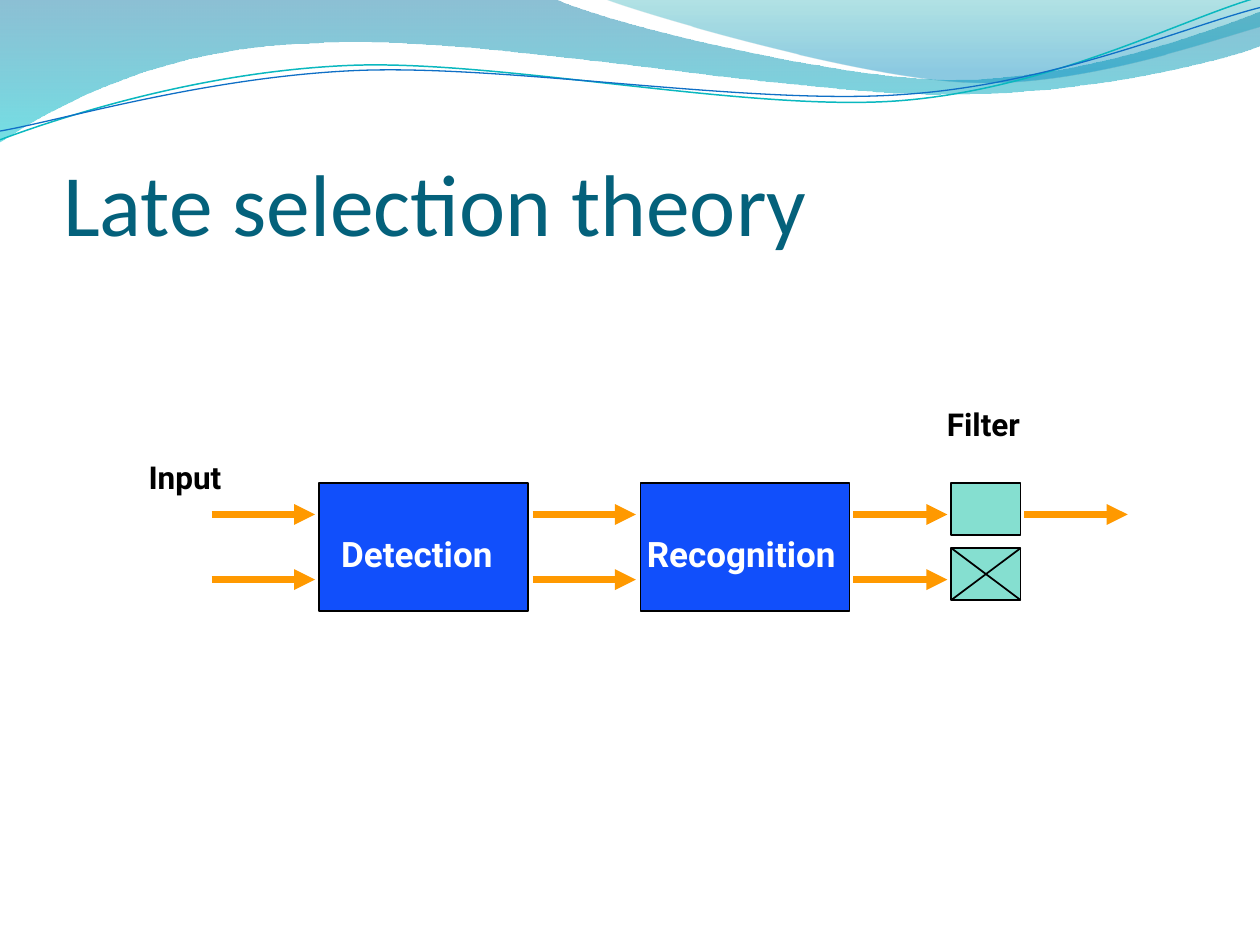
import itertools
import math
from dataclasses import dataclass

import pptx
import pptx.dml.color
import pptx.enum.shapes
import pptx.enum.text
import pptx.oxml.ns
import pptx.util
from lxml import etree

Pt = pptx.util.Pt
qn = pptx.oxml.ns.qn


@dataclass(frozen=True)
class Theme:
    title_font: str = "Calibri"
    label_font: str = "Roboto"
    title_size: int = 50
    stage_size: int = 20
    label_size: int = 18
    title: str = "04617B"
    stage: str = "114FFB"
    cell: str = "85DFD0"
    arrow: str = "FF9900"
    ink: str = "000000"
    paper: str = "FFFFFF"
    teal_line: str = "0AB8BF"
    blue_line: str = "0F6FC6"
    wide_wave: tuple = ((0, "0074A1", 45), (1, "00C6CF", 55))
    right_wave: tuple = ((0, "00A1A9", 30), (0.8, "008BBF", 45))


THEME = Theme()
CURVE_TURN = -2.7

WIDE_WAVE = [
    [(0, 0)],
    [(316.8, -0.7)],
    [(342.7, 12.2), (478.1, 45.4), (545.8, 45.4)],
    [(614.2, 45.4), (689.8, 18.7), (720, 6.5)],
    [(720.7, 25.9)],
    [(707.8, 31.7), (626.4, 54.7), (537.1, 54)],
    [(447.8, 54), (275, 20.2), (185, 24.5)],
    [(92.9, 25.9), (33.1, 59.8), (-0.7, 81.4)],
    [(0, 0)],
]
RIGHT_WAVE = [
    [(344.9, -0.7)],
    [(366.5, 7.9), (491, 44.6), (553.7, 46.8)],
    [(616.3, 49.7), (691.9, 23), (720, 15.1)],
    [(720, 0)],
    [(344.9, -0.7)],
]
TEAL_CURVE = [
    [(0, 79.9)],
    [(34.6, 67), (113.8, 41), (199.4, 37.4)],
    [(284.4, 33.8), (427, 64.1), (513.4, 57.6)],
    [(599.8, 51.1), (675.4, 10.8), (718.6, -1.4)],
]
BLUE_CURVE = [
    [(0, 74.9)],
    [(33.8, 69.1), (118.1, 43.9), (203.8, 40.3)],
    [(290.2, 36.7), (429.8, 60.5), (516.2, 54)],
    [(601.9, 48.2), (677.5, 15.1), (720, 4.3)],
]


def rgb(code):
    return pptx.dml.color.RGBColor.from_string(code)


def turn_back(point, center, degrees):
    angle = math.radians(-degrees)
    x, y = point[0] - center[0], point[1] - center[1]
    return (center[0] + x * math.cos(angle) - y * math.sin(angle),
            center[1] + x * math.sin(angle) + y * math.cos(angle))


def add_path(page, segments, frame, close=False, turn=0):
    left, top, width, height = frame
    builder = page.shapes.build_freeform(Pt(left), Pt(top))
    builder.add_line_segments([(Pt(left + width), Pt(top + height))], close=False)
    shape = builder.convert_to_shape()
    shape.shadow.inherit = False
    shape.rotation = turn
    center = (left + width / 2, top + height / 2)
    outline = next(shape.element.iter(qn("a:path")))
    for command in list(outline):
        outline.remove(command)
    for index, segment in enumerate(segments):
        kind = "a:cubicBezTo" if len(segment) == 3 else "a:lnTo" if index else "a:moveTo"
        command = etree.SubElement(outline, qn(kind))
        for point in segment:
            x, y = turn_back(point, center, turn)
            etree.SubElement(command, qn("a:pt"), x=str(Pt(x - left)), y=str(Pt(y - top)))
    if close:
        etree.SubElement(outline, qn("a:close"))
    return shape


def add_wave(page, segments, frame, stops):
    wave = add_path(page, segments, frame, close=True)
    wave.line.fill.background()
    wave.fill.gradient()
    wave.fill.gradient_angle = 270
    for stop, (position, color, opacity) in zip(wave.fill.gradient_stops, stops):
        stop.position = position
        stop.color.rgb = rgb(color)
    colors = list(wave.element.spPr.iter(qn("a:srgbClr")))
    for element, (position, color, opacity) in zip(colors, stops):
        etree.SubElement(element, qn("a:alpha"), val=str(opacity * 1000))


def add_curve(page, segments, frame, color, width):
    curve = add_path(page, segments, frame, turn=CURVE_TURN)
    curve.fill.background()
    curve.line.color.rgb = rgb(color)
    curve.line.width = Pt(width)


def add_block(page, left, top, width, height, color):
    block = page.shapes.add_shape(
        pptx.enum.shapes.MSO_SHAPE.RECTANGLE, Pt(left), Pt(top), Pt(width), Pt(height))
    block.shadow.inherit = False
    block.fill.solid()
    block.fill.fore_color.rgb = rgb(color)
    block.line.color.rgb = rgb(THEME.ink)
    block.line.width = Pt(1)


def add_line(page, start, end, color, width, arrow=False):
    line = page.shapes.add_connector(
        pptx.enum.shapes.MSO_CONNECTOR.STRAIGHT, *map(Pt, start), *map(Pt, end))
    line.line.color.rgb = rgb(color)
    line.line.width = Pt(width)
    if arrow:
        stroke = line.element.spPr.find(qn("a:ln"))
        etree.SubElement(stroke, qn("a:tailEnd"), type="triangle")
    etree.SubElement(line.element.spPr, qn("a:effectLst"))


def add_text(page, text, left, top, width, height, size, color,
             font=THEME.label_font, bold=True):
    box = page.shapes.add_textbox(Pt(left), Pt(top), Pt(width), Pt(height))
    box.text_frame.word_wrap = True
    paragraph = box.text_frame.paragraphs[0]
    paragraph.text = text
    paragraph.font.name = font
    paragraph.font.size = Pt(size)
    paragraph.font.bold = bold
    paragraph.font.color.rgb = rgb(color)
    return box.text_frame


def add_title(page, text):
    frame = add_text(page, text, 36, 55.4, 653.8, 90, THEME.title_size,
                     THEME.title, THEME.title_font, False)
    frame.margin_left = frame.margin_right = frame.margin_bottom = 0
    frame.vertical_anchor = pptx.enum.text.MSO_ANCHOR.BOTTOM


def add_diagram(page):
    top, lanes = 276, (294, 331.2)
    for left in (182.2, 366):
        add_block(page, left, top, 119.5, 73, THEME.stage)
    add_text(page, "Detection", 187.9, 300.6, 120.2, 31, THEME.stage_size, THEME.paper)
    add_text(page, "Recognition", 362.5, 301, 137.5, 31, THEME.stage_size, THEME.paper)
    add_text(page, "Input", 77.8, 258.2, 62.6, 28.8, THEME.label_size, THEME.ink)
    add_text(page, "Filter", 534, 228.2, 62.6, 28.8, THEME.label_size, THEME.ink)

    spans = ((121, 180), (304.4, 363.4), (487.7, 541.4))
    flows = [*itertools.product(spans, lanes), ((585.4, 644.4), lanes[0])]
    for (start, end), lane in flows:
        add_line(page, (start, lane), (end, lane), THEME.arrow, 4, arrow=True)

    left, width, height = 543.6, 39.6, 29.7
    blocked = top + lanes[1] - lanes[0]
    for cell_top in (blocked, top):
        add_block(page, left, cell_top, width, height, THEME.cell)
    for start, end in ((blocked, blocked + height), (blocked + height, blocked)):
        add_line(page, (left, start), (left + width, end), THEME.ink, 1)


def main():
    deck = pptx.Presentation()
    deck.slide_width, deck.slide_height = Pt(720), Pt(540)
    page = deck.slides.add_slide(deck.slide_layouts[6])
    add_wave(page, WIDE_WAVE, (-0.7, -0.7, 721.4, 82.1), THEME.wide_wave)
    add_wave(page, RIGHT_WAVE, (344.9, -0.7, 375.1, 50.4), THEME.right_wave)
    add_curve(page, TEAL_CURVE, (-1.4, 15.8, 721.4, 51.1), THEME.teal_line, 0.85)
    add_curve(page, BLUE_CURVE, (-1.4, 21.6, 722.2, 41.8), THEME.blue_line, 0.75)
    add_title(page, "Late selection theory")
    add_diagram(page)
    deck.save("out.pptx")


if __name__ == "__main__":
    main()
